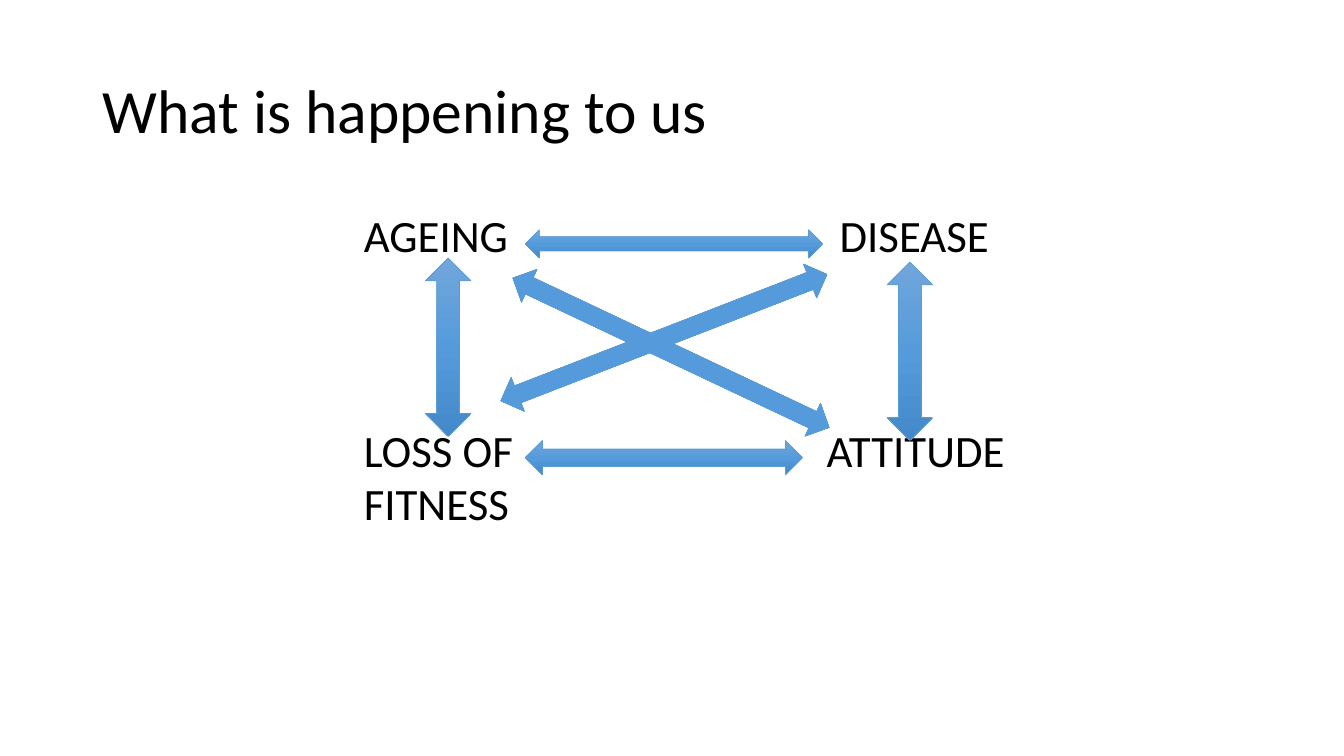
from copy import deepcopy
from dataclasses import dataclass

from pptx import Presentation
from pptx import util as u
from pptx.dml import color
from pptx.enum import shapes, text


@dataclass(frozen=True)
class Theme:
    """Colours and type sizes of the slide."""
    font: str = "Calibri"
    ink: str = "000000"
    title_size: int = 44
    label_size: int = 32
    gradient: tuple = ((0, "71A6DB"), (0.5, "559BDB"), (1, "448ACA"))
    outline: str = "5B9BD5"
    outline_width: float = 0.5


THEME = Theme()
HORIZONTAL = shapes.MSO_SHAPE.LEFT_RIGHT_ARROW
VERTICAL = shapes.MSO_SHAPE.UP_DOWN_ARROW


def rgb(code):
    """Turn a hex code into a colour."""
    return color.RGBColor.from_string(code)


def add_text(slide, lines, left, top, width, height, *, size,
             anchor=text.MSO_ANCHOR.TOP, spacing=1.0):
    """Write lines as paragraphs in a wrapped text box."""
    box = slide.shapes.add_textbox(*map(u.Inches, (left, top, width, height)))
    frame = box.text_frame
    frame.word_wrap = True
    frame.vertical_anchor = anchor
    frame.text = "\n".join(lines)
    for paragraph in frame.paragraphs:
        paragraph.line_spacing = spacing
        font = paragraph.runs[0].font
        font.name, font.size = THEME.font, u.Pt(size)
        font.color.rgb = rgb(THEME.ink)


def fill_gradient(fill):
    """Apply the three-stop theme gradient from top to bottom."""
    fill.gradient()
    fill.gradient_angle = 270
    stop_list = fill._fill._gradFill.gsLst
    stop_list.append(deepcopy(stop_list[-1]))
    for stop, (position, code) in zip(fill.gradient_stops, THEME.gradient):
        stop.position = position
        stop.color.rgb = rgb(code)


def add_arrow(slide, kind, left, top, width, height, rotation=0):
    """Draw a double-headed block arrow."""
    arrow = slide.shapes.add_shape(
        kind, *map(u.Inches, (left, top, width, height)))
    arrow.rotation = rotation
    arrow.shadow.inherit = False
    fill_gradient(arrow.fill)
    arrow.line.color.rgb = rgb(THEME.outline)
    arrow.line.width = u.Pt(THEME.outline_width)


def main():
    """Build the slide and save it."""
    deck = Presentation()
    deck.slide_width, deck.slide_height = u.Inches(13.33), u.Inches(7.5)
    slide = deck.slides.add_slide(deck.slide_layouts[6])

    add_text(slide, ["What is happening to us"], 0.92, 0.4, 11.5, 1.45,
             size=THEME.title_size, anchor=text.MSO_ANCHOR.MIDDLE, spacing=0.9)

    upper, lower = 2.01, 4.14
    factors = (
        (["AGEING"], 3.51, upper),
        (["DISEASE"], 8.23, upper),
        (["LOSS OF", "FITNESS"], 3.51, lower),
        (["ATTITUDE"], 8.1, lower),
    )
    for lines, left, top in factors:
        add_text(slide, lines, left, top, 2.4, 0.1 + 0.54 * len(lines),
                 size=THEME.label_size)

    add_arrow(slide, HORIZONTAL, 5.21, 2.28, 2.95, 0.28)
    add_arrow(slide, HORIZONTAL, 5.21, 4.37, 2.75, 0.34)
    add_arrow(slide, HORIZONTAL, 4.92, 3.32, 3.47, 0.36, rotation=25.3)
    add_arrow(slide, HORIZONTAL, 4.85, 3.17, 3.47, 0.36, rotation=338.8)
    add_arrow(slide, VERTICAL, 8.8, 2.6, 0.45, 1.77)
    add_arrow(slide, VERTICAL, 4.22, 2.56, 0.45, 1.77)

    deck.save("out.pptx")


if __name__ == "__main__":
    main()
